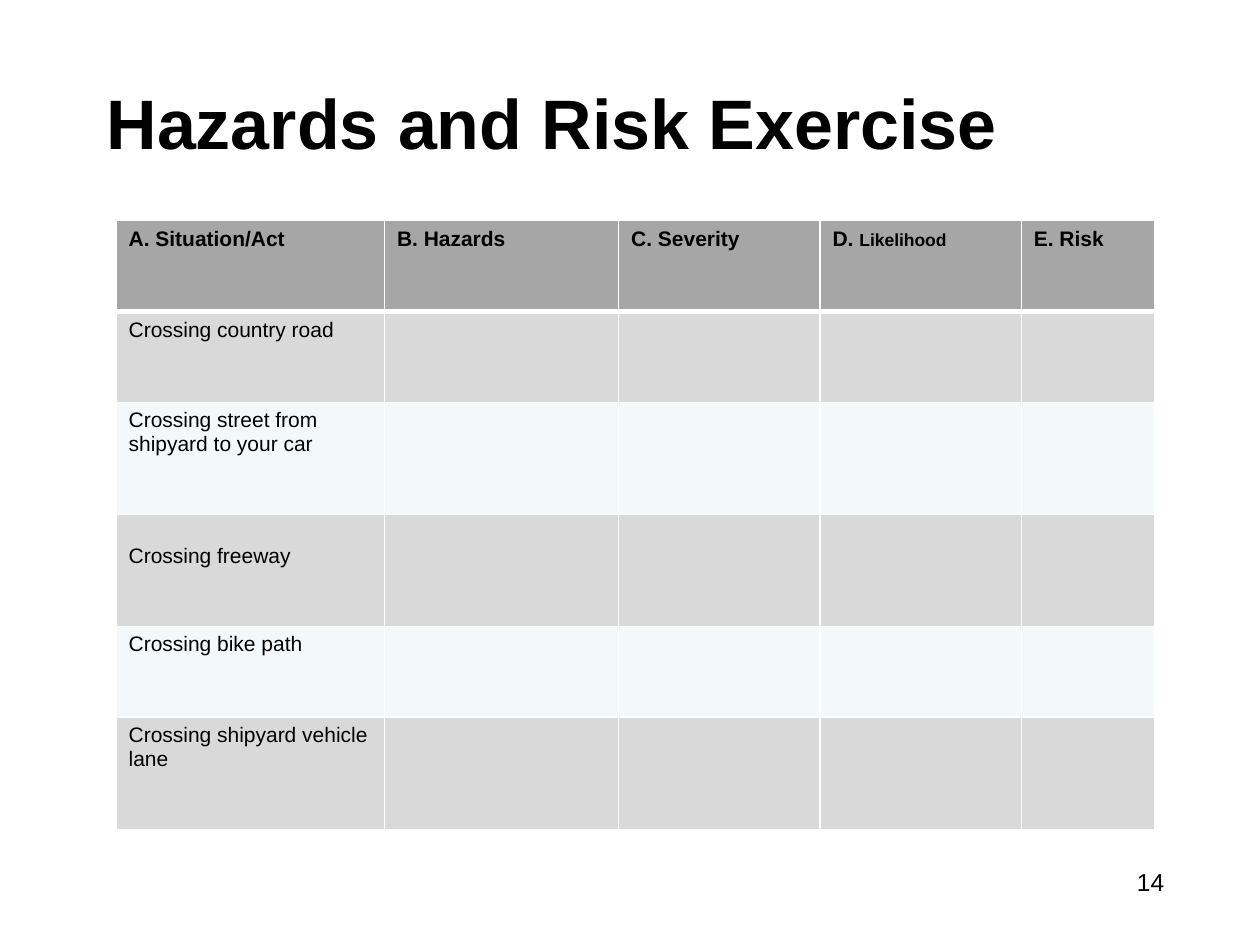
import pptx
import pptx.dml.color
import pptx.enum.text
import pptx.oxml
import pptx.oxml.ns
import pptx.util

Cm = pptx.util.Cm
Pt = pptx.util.Pt
ALIGN = pptx.enum.text.PP_ALIGN
ANCHOR = pptx.enum.text.MSO_ANCHOR

COLORS = {
    "text": "000000",
    "header": "A6A6A6",
    "odd_row": "D9D9D9",
    "even_row": "F3F9FA",
    "border": "FFFFFF",
}


def add_text(frame, text, size=12, bold=False, align=ALIGN.LEFT):
    """Add a formatted span to the first paragraph of a text frame."""
    frame.word_wrap = True
    para = frame.paragraphs[0]
    para.alignment = align
    span = para.add_run()
    span.text = text
    span.font.name = "Arial"
    span.font.size = Pt(size)
    span.font.bold = bold
    span.font.color.rgb = pptx.dml.color.RGBColor.from_string(COLORS["text"])


def style_cell(cell, color, widths):
    """Fill a cell and draw its borders; widths maps each side to points."""
    cell.fill.solid()
    cell.fill.fore_color.rgb = pptx.dml.color.RGBColor.from_string(color)
    properties = cell._tc.get_or_add_tcPr()
    for position, (side, width) in enumerate(widths.items()):
        line = pptx.oxml.parse_xml(
            f'<a:ln{side} {pptx.oxml.ns.nsdecls("a")} w="{Pt(width)}"><a:solidFill>'
            f'<a:srgbClr val="{COLORS["border"]}"/></a:solidFill></a:ln{side}>'
        )
        properties.insert(position, line)


deck = pptx.Presentation()
deck.slide_width, deck.slide_height = Cm(25.4), Cm(19.05)
page = deck.slides.add_slide(deck.slide_layouts[6])

# Title
title = page.shapes.add_textbox(Cm(1.9), Cm(0.86), Cm(21.6), Cm(3.18))
title.text_frame.vertical_anchor = ANCHOR.MIDDLE
add_text(title.text_frame, "Hazards and Risk Exercise", size=40, bold=True)

# Table grid
column_widths = [5.41, 4.72, 4.06, 4.06, 2.7]
row_heights = [1.83, 1.83, 2.26, 2.26, 1.83, 2.26]
table = page.shapes.add_table(
    len(row_heights), len(column_widths), Cm(2.34), Cm(4.45),
    Cm(sum(column_widths)), Cm(sum(row_heights)),
).table
for column, width in zip(table.columns, column_widths):
    column.width = Cm(width)
for row, height in zip(table.rows, row_heights):
    row.height = Cm(height)

# Fills and borders: the line under the header is thicker
for row_index, row in enumerate(table.rows):
    if row_index == 0:
        color = COLORS["header"]
    else:
        color = COLORS["odd_row" if row_index % 2 else "even_row"]
    widths = {"L": 1, "R": 1, "T": 3 if row_index == 1 else 1,
              "B": 3 if row_index == 0 else 1}
    for cell in row.cells:
        style_cell(cell, color, widths)

# Header texts, each a list of spans with their sizes
headers = [
    [("A. Situation/Act", 12)],
    [("B. Hazards", 12)],
    [("C. Severity", 12)],
    [("D. ", 12), ("Likelihood", 10)],
    [("E. Risk", 12)],
]
for column_index, spans in enumerate(headers):
    for text, size in spans:
        add_text(table.cell(0, column_index).text_frame, text, size=size, bold=True)

# Situations, with the top margin of each cell
situations = [
    ("Crossing country road", 0.13),
    ("Crossing street from shipyard to your car", 0.13),
    ("Crossing freeway", 0.61),
    ("Crossing bike path", 0.13),
    ("Crossing shipyard vehicle lane", 0.13),
]
for row_index, (text, margin) in enumerate(situations, start=1):
    cell = table.cell(row_index, 0)
    cell.margin_top = Cm(margin)
    add_text(cell.text_frame, text)

# Page number
number = page.shapes.add_textbox(Cm(18.2), Cm(17.35), Cm(5.52), Cm(1.32))
add_text(number.text_frame, "14", size=14, align=ALIGN.RIGHT)

deck.save("out.pptx")
